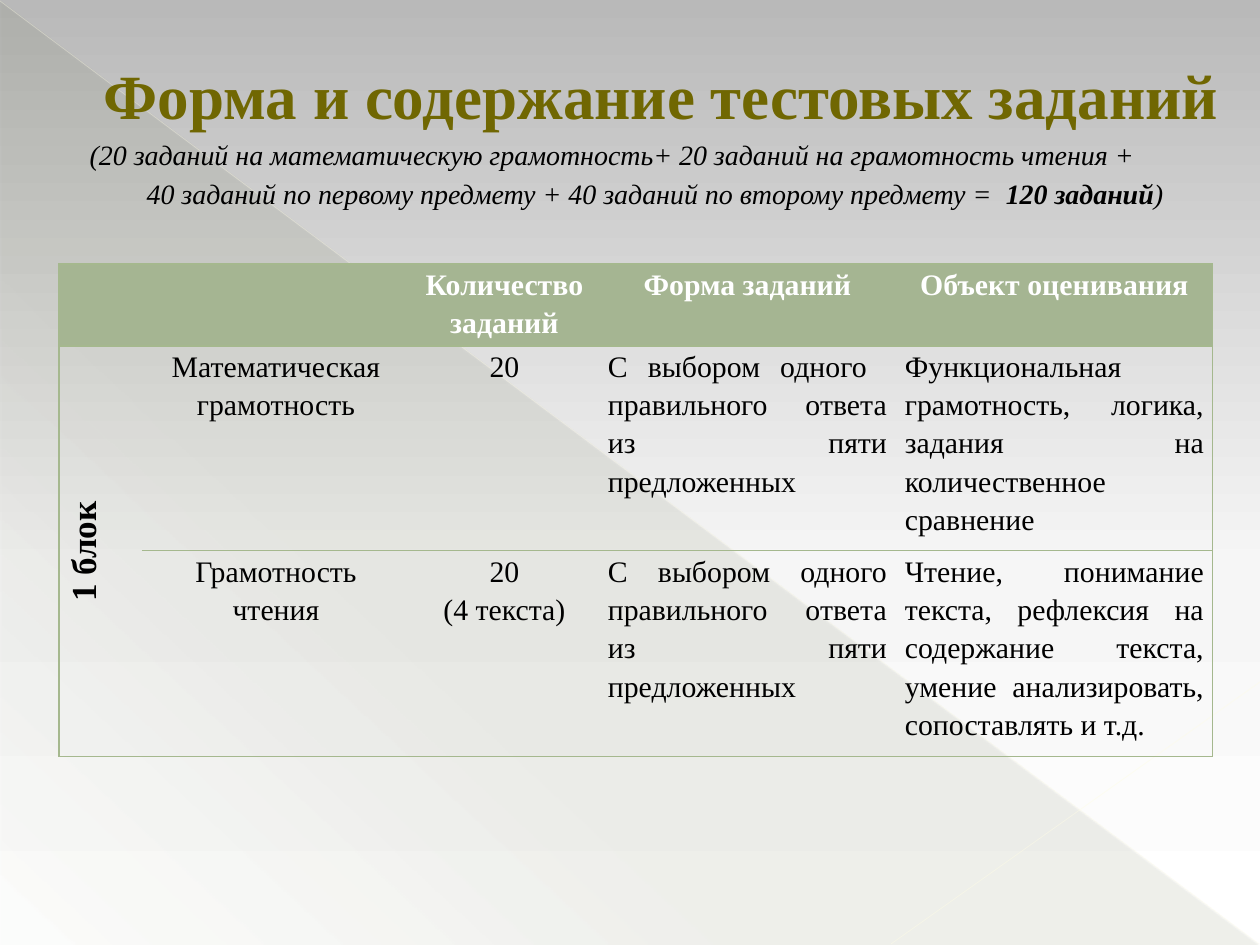
"""Builds a slide on the form and content of test tasks."""
from lxml import etree
from pptx import Presentation
from pptx.dml.color import RGBColor
from pptx.enum.shapes import MSO_CONNECTOR, MSO_SHAPE
from pptx.enum.text import MSO_ANCHOR, MSO_AUTO_SIZE, PP_ALIGN
from pptx.oxml.ns import qn
from pptx.util import Emu, Pt

STRAIGHT = MSO_CONNECTOR.STRAIGHT
RIGHT_TRIANGLE = MSO_SHAPE.RIGHT_TRIANGLE
BOTTOM = MSO_ANCHOR.BOTTOM
NO_AUTOSIZE = MSO_AUTO_SIZE.NONE
LEFT, CENTER, JUSTIFY = PP_ALIGN.LEFT, PP_ALIGN.CENTER, PP_ALIGN.JUSTIFY
PX = 914400 // 126
FONT = "Times New Roman"
PLAIN_TABLE = "{2D5ABB26-0587-4C30-8999-92F81FD0307C}"
COLORS = {
    "top": "B9B9B9", "middle": "F6F6F6", "white": "FFFFFF", "black": "000000",
    "shade": "444D26", "ray": "FFFDE3", "glow": "FFFDE6",
    "title": "706702", "header": "A5B592", "border": "A5B88E",
}


def set_gradient(element, fill, stops, angle):
    fill.gradient()
    gradient = element.find(".//" + qn("a:gradFill"))
    stop_list = gradient.find(qn("a:gsLst"))
    for old_stop in list(stop_list):
        stop_list.remove(old_stop)
    for position, color, opacity in stops:
        stop = etree.SubElement(stop_list, qn("a:gs"), pos=str(position * 1000))
        tint = etree.SubElement(stop, qn("a:srgbClr"), val=COLORS[color])
        etree.SubElement(tint, qn("a:alpha"), val=str(opacity * 1000))
    gradient.find(qn("a:lin")).set("ang", str(angle * 60000))


def add_run(paragraph, text, size, color, bold=False, italic=False):
    run = paragraph.add_run()
    run.text = text
    run.font.name = FONT
    run.font.size = Pt(size)
    run.font.bold = bold
    run.font.italic = italic
    run.font.color.rgb = RGBColor.from_string(COLORS[color])


presentation = Presentation()
presentation.slide_width = Emu(1260 * PX)
presentation.slide_height = Emu(945 * PX)
slide = presentation.slides.add_slide(presentation.slide_layouts[5])
set_gradient(slide.element, slide.background.fill,
             [(0, "top", 100), (60, "middle", 100), (100, "white", 100)], 90)

triangle = slide.shapes.add_shape(RIGHT_TRIANGLE, 1 * PX, 2 * PX, 1258 * PX, 943 * PX)
triangle.shadow.inherit = False
triangle.line.fill.background()
set_gradient(triangle.element, triangle.fill,
             [(0, "shade", 10), (70, "shade", 8), (100, "shade", 1)], 133)

for x1, y1, x2, y2, color, width, opacity in [
    (0, 1, 1259, 944, "ray", 0.39, 35),
    (1260, 682, 891, 944, "glow", 0.47, 45),
]:
    ray = slide.shapes.add_connector(STRAIGHT, x1 * PX, y1 * PX, x2 * PX, y2 * PX)
    ray.line.width = Pt(width)
    ray.line.color.rgb = RGBColor.from_string(COLORS[color])
    tint = ray.element.find(".//" + qn("a:ln")).find(".//" + qn("a:srgbClr"))
    etree.SubElement(tint, qn("a:alpha"), val=str(opacity * 1000))
    etree.SubElement(ray.element.spPr, qn("a:effectLst"))

title = slide.shapes.title
title.element.getparent().append(title.element)
title.left, title.top, title.width, title.height = 15 * PX, 37 * PX, 1230 * PX, 179 * PX
frame = title.text_frame
frame.word_wrap = True
frame.auto_size = NO_AUTOSIZE
frame.vertical_anchor = BOTTOM
heading, summary = frame.paragraphs[0], frame.add_paragraph()
for paragraph, alignment, margin, indent in [
    (heading, CENTER, 0, 62), (summary, LEFT, 119, -57),
]:
    paragraph.alignment = alignment
    paragraph.line_spacing = 1.15
    properties = paragraph._p.get_or_add_pPr()
    properties.set("marL", str(margin * PX))
    properties.set("indent", str(indent * PX))
add_run(heading, "Форма и содержание тестовых заданий", 36, "title", bold=True)
add_run(summary, "(20 заданий на математическую грамотность+ 20 заданий на грамотность чтения +",
        16, "black", italic=True)
summary.add_line_break()
add_run(summary, "40 заданий по первому предмету + 40 заданий по второму предмету =  ",
        16, "black", italic=True)
add_run(summary, "120 заданий", 16, "black", bold=True, italic=True)
add_run(summary, ")", 16, "black", italic=True)

rows = [
    ["", "", "Количество заданий", "Форма заданий", "Объект оценивания"],
    ["1 блок", "Математическая грамотность", "20",
     "С выбором одного  правильного ответа из пяти предложенных",
     "Функциональная грамотность, логика, задания на количественное сравнение"],
    ["", "Грамотность чтения", "20\n(4 текста)",
     "С выбором одного правильного ответа из пяти предложенных",
     "Чтение, понимание текста, рефлексия на содержание текста, "
     "умение анализировать, сопоставлять и т.д."],
]
column_widths = [83, 268, 189, 297, 317]
row_heights = [82, 205, 206]
table = slide.shapes.add_table(
    len(rows), len(column_widths), 59 * PX, 264 * PX,
    sum(column_widths) * PX, sum(row_heights) * PX).table
table._tbl.tblPr.find(qn("a:tableStyleId")).text = PLAIN_TABLE
for column, width in zip(table.columns, column_widths):
    column.width = width * PX
for row, height in zip(table.rows, row_heights):
    row.height = height * PX
table.cell(1, 0).merge(table.cell(2, 0))

for row_index, row in enumerate(rows):
    for column_index, text in enumerate(row):
        cell = table.cell(row_index, column_index)
        is_header, is_block = row_index == 0, column_index == 0
        cell.margin_left = cell.margin_right = 9 * PX
        cell.margin_top = cell.margin_bottom = 0
        properties = cell._tc.get_or_add_tcPr()
        sides = ["a:lnT", "a:lnB"]
        if column_index == 0:
            sides.insert(0, "a:lnL")
        if column_index == len(row) - 1:
            sides.insert(0, "a:lnR")
        for side in sides:
            border = etree.SubElement(properties, qn(side), w=str(Pt(0.75)))
            border_fill = etree.SubElement(border, qn("a:solidFill"))
            etree.SubElement(border_fill, qn("a:srgbClr"), val=COLORS["border"])
        if is_header:
            cell.fill.solid()
            cell.fill.fore_color.rgb = RGBColor.from_string(COLORS["header"])
        else:
            cell.fill.background()
        if is_block and text:
            properties.set("vert", "vert270")
        for line_index, line in enumerate(text.split("\n") if text else []):
            frame = cell.text_frame
            paragraph = frame.add_paragraph() if line_index else frame.paragraphs[0]
            paragraph.alignment = JUSTIFY if column_index > 2 and not is_header else CENTER
            paragraph.line_spacing = 1.15
            add_run(paragraph, line, 20 if is_block else 17,
                    "white" if is_header else "black", bold=is_header or is_block)

presentation.save("out.pptx")
